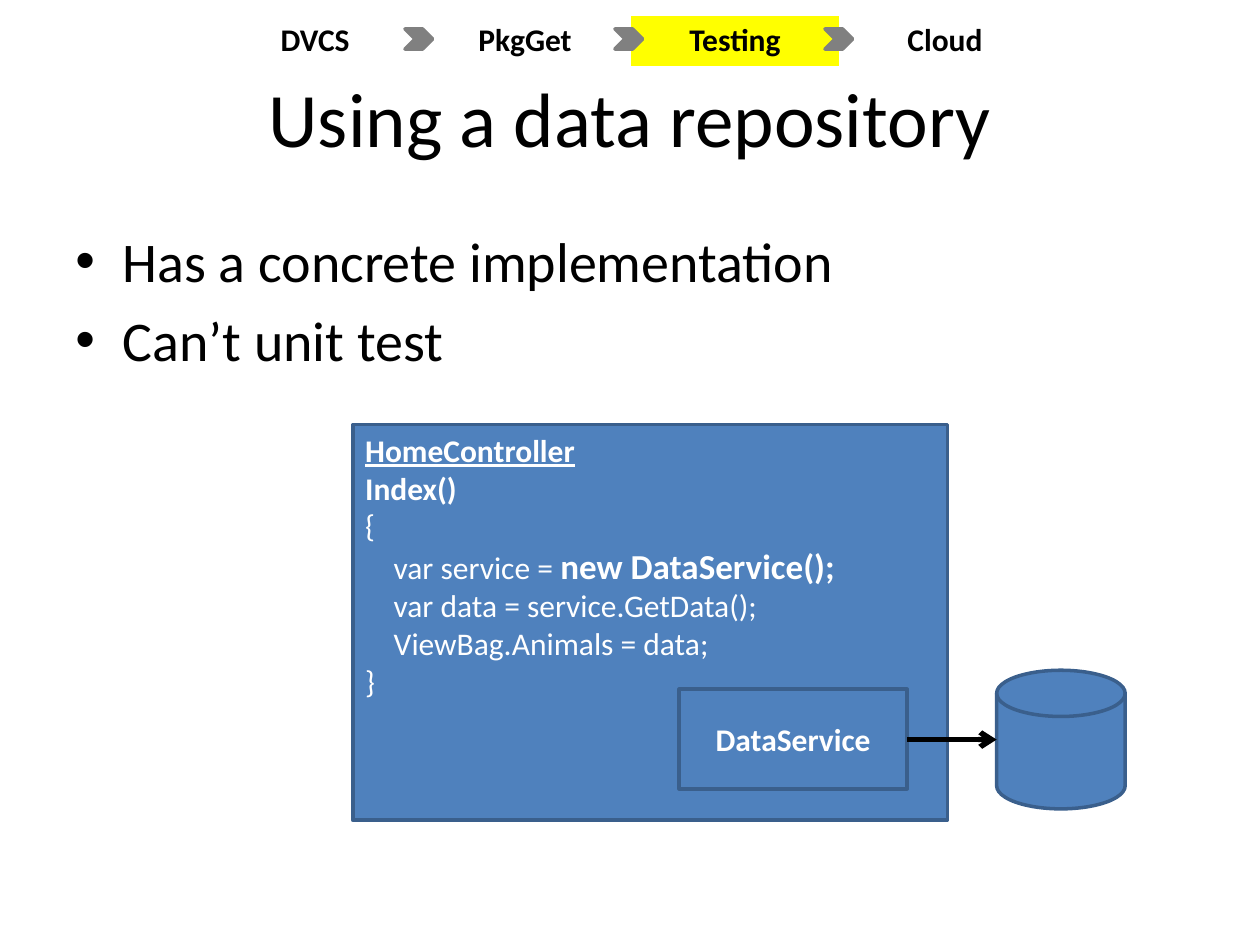
import dataclasses

import lxml.etree
import pptx
import pptx.dml.color
import pptx.enum.shapes
import pptx.enum.text
import pptx.oxml.ns
import pptx.util

KIND = pptx.enum.shapes.MSO_SHAPE
ALIGN = pptx.enum.text.PP_ALIGN
ANCHOR = pptx.enum.text.MSO_ANCHOR
WIDE, HIGH = 10, 7.5
COLS, ROWS = 100, 75


@dataclasses.dataclass(frozen=True)
class Theme:
    font: str = "Calibri"
    ink: str = "000000"
    pale: str = "FFFFFF"
    box: str = "4F81BD"
    edge: str = "3A5F8C"
    mark: str = "FFFF00"
    step: str = "808080"
    head: int = 44
    body: int = 32
    call: int = 20
    code: int = 18


THEME = Theme()


def across(cols):
    return pptx.util.Inches(cols * WIDE / COLS)


def down(rows):
    return pptx.util.Inches(rows * HIGH / ROWS)


def frame(left, top, width, height):
    return across(left), down(top), across(width), down(height)


def color(name):
    return pptx.dml.color.RGBColor.from_string(name)


def style(run, size, ink, bold=False, under=False):
    font = run.font
    font.name = THEME.font
    font.size = pptx.util.Pt(size)
    font.color.rgb = color(ink)
    font.bold = bold
    font.underline = under


def child(node, tag, **attrs):
    return lxml.etree.SubElement(node, pptx.oxml.ns.qn(tag), attrs)


def indent(para, left, first=0):
    props = para._p.get_or_add_pPr()
    props.set("marL", str(across(left)))
    props.set("indent", str(across(first)))
    return props


def label(text, words, size, ink, bold=False):
    text.text = words
    para = text.paragraphs[0]
    para.alignment = ALIGN.CENTER
    style(para.runs[0], size, ink, bold)


def add_title(slide, words):
    title = slide.shapes.title
    title.left, title.top, title.width, title.height = frame(5, 3, 90, 12.5)
    title.text_frame.vertical_anchor = ANCHOR.MIDDLE
    label(title.text_frame, words, THEME.head, THEME.ink)


def add_steps(slide, names, active):
    left, top, width, height = 16.67, 1.2, 66.67, 4.1
    table = slide.shapes.add_table(1, len(names), *frame(left, top, width, height)).table
    gap = width / len(names)
    for col, name in enumerate(names):
        cell = table.cell(0, col)
        label(cell.text_frame, name, THEME.code, THEME.ink, True)
        if name == active:
            cell.fill.solid()
            cell.fill.fore_color.rgb = color(THEME.mark)
        else:
            cell.fill.background()
        if col:
            add_shape(slide, KIND.CHEVRON, (left + col * gap - 1.2, 2.3, 2.2, 1.6),
                      THEME.step, THEME.step)


def add_shape(slide, kind, place, fill=THEME.box, line=THEME.edge):
    shape = slide.shapes.add_shape(kind, *frame(*place))
    shape.shadow.inherit = False
    shape.fill.solid()
    shape.fill.fore_color.rgb = color(fill)
    shape.line.color.rgb = color(line)
    shape.line.width = pptx.util.Pt(2)
    return shape


def add_list(slide, place, items):
    text = slide.shapes.add_textbox(*frame(*place)).text_frame
    text.word_wrap = True
    text.text = "\n".join(items)
    for para in text.paragraphs:
        para.space_before = pptx.util.Pt(THEME.body * 0.2)
        props = indent(para, 3.75, -3.75)
        child(props, "a:buFont", typeface="Arial")
        child(props, "a:buChar", char="•")
        style(para.runs[0], THEME.body, THEME.ink)


def add_code(slide, place, lines):
    text = add_shape(slide, KIND.RECTANGLE, place).text_frame
    text.vertical_anchor = ANCHOR.TOP
    for row, (depth, parts) in enumerate(lines):
        para = text.add_paragraph() if row else text.paragraphs[0]
        para.alignment = ALIGN.LEFT
        indent(para, depth * 2.26)
        for words, size, bold, under in parts:
            run = para.add_run()
            run.text = words
            style(run, size, THEME.pale, bold, under)


def add_arrow(slide, start, end):
    line = slide.shapes.add_connector(
        pptx.enum.shapes.MSO_CONNECTOR.STRAIGHT,
        across(start[0]), down(start[1]), across(end[0]), down(end[1]))
    line.line.color.rgb = color(THEME.ink)
    line.line.width = pptx.util.Pt(3)
    child(line.line._get_or_add_ln(), "a:tailEnd", type="arrow")
    child(line._element.spPr, "a:effectLst")


def main():
    deck = pptx.Presentation()
    deck.slide_width = pptx.util.Inches(WIDE)
    deck.slide_height = pptx.util.Inches(HIGH)
    slide = deck.slides.add_slide(deck.slide_layouts.get_by_name("Title Only"))

    add_steps(slide, ["DVCS", "PkgGet", "Testing", "Cloud"], "Testing")
    add_title(slide, "Using a data repository")
    add_list(slide, (5, 17.5, 90, 49.5),
             ["Has a concrete implementation", "Can’t unit test"])

    size = THEME.code
    add_code(slide, (28, 33.7, 47.2, 31.4), [
        (0, [("HomeController", size, True, True)]),
        (0, [("Index()", size, True, False)]),
        (0, [("{", size, False, False)]),
        (1, [("var service = ", size, False, False),
             ("new DataService();", THEME.call, True, False)]),
        (1, [("var data = service.GetData();", size, False, False)]),
        (1, [("ViewBag.Animals = data;", size, False, False)]),
        (0, [("}", size, False, False)]),
    ])
    part = add_shape(slide, KIND.RECTANGLE, (53.9, 54.7, 18.1, 7.9))
    label(part.text_frame, "DataService", size, THEME.pale, True)
    add_shape(slide, KIND.FLOWCHART_MAGNETIC_DISK, (79.1, 53.2, 10.2, 11))
    add_arrow(slide, (72, 58.7), (79.1, 58.7))

    deck.save("out.pptx")


if __name__ == "__main__":
    main()
